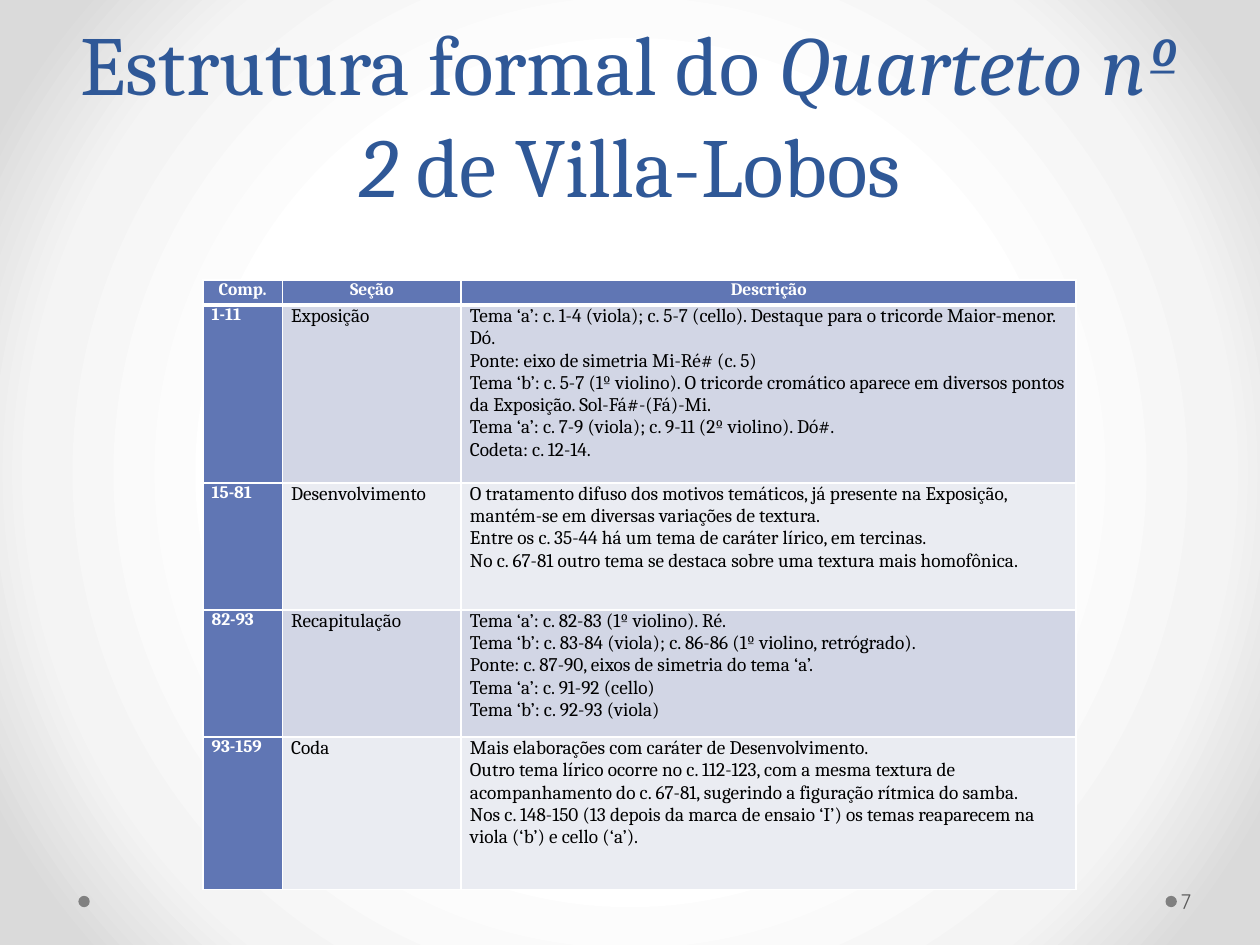
from lxml import etree
from pptx import Presentation
from pptx.dml.color import RGBColor
from pptx.enum.shapes import MSO_SHAPE
from pptx.enum.text import MSO_ANCHOR, PP_ALIGN
from pptx.oxml.ns import qn
from pptx.util import Pt

OVAL = MSO_SHAPE.OVAL
BOTTOM, MIDDLE = MSO_ANCHOR.BOTTOM, MSO_ANCHOR.MIDDLE
LEFT, CENTER = PP_ALIGN.LEFT, PP_ALIGN.CENTER

SERIF, SANS = "Cambria", "Quicksand"
WHITE, BLACK, NAVY, BLUE = "FFFFFF", "000000", "2F5897", "6076B4"
BANDS = ("D2D6E5", "EAECF2")
BACKDROP = ((50, "FFFFFF"), (76, "F4F4F4"), (92, "DADADA"))

COLUMNS = (45.4, 102.2, 351.4)
ROWS = (14.4, 101.5, 72.7, 72.7, 87.1)
HEADINGS = ("Comp.", "Seção", "Descrição")
SECTIONS = (
    ("1-11", "Exposição", (
        "Tema ‘a’: c. 1-4 (viola); c. 5-7 (cello). Destaque para o tricorde Maior-menor. Dó.",
        "Ponte: eixo de simetria Mi-Ré# (c. 5)",
        "Tema ‘b’: c. 5-7 (1º violino). O tricorde cromático aparece em diversos pontos "
        "da Exposição. Sol-Fá#-(Fá)-Mi.",
        "Tema ‘a’: c. 7-9 (viola); c. 9-11 (2º violino). Dó#.",
        "Codeta: c. 12-14.")),
    ("15-81", "Desenvolvimento", (
        "O tratamento difuso dos motivos temáticos, já presente na Exposição, "
        "mantém-se em diversas variações de textura.",
        "Entre os c. 35-44 há um tema de caráter lírico, em tercinas.",
        "No c. 67-81 outro tema se destaca sobre uma textura mais homofônica.")),
    ("82-93", "Recapitulação", (
        "Tema ‘a’: c. 82-83 (1º violino). Ré.",
        "Tema ‘b’: c. 83-84 (viola); c. 86-86 (1º violino, retrógrado).",
        "Ponte: c. 87-90, eixos de simetria do tema ‘a’.",
        "Tema ‘a’: c. 91-92 (cello)",
        "Tema ‘b’: c. 92-93 (viola)")),
    ("93-159", "Coda", (
        "Mais elaborações com caráter de Desenvolvimento.",
        "Outro tema lírico ocorre no c. 112-123, com a mesma textura de "
        "acompanhamento do c. 67-81, sugerindo a figuração rítmica do samba.",
        "Nos c. 148-150 (13 depois da marca de ensaio ‘I’) os temas reaparecem na "
        "viola (‘b’) e cello (‘a’).")),
)


def color(value):
    return RGBColor.from_string(value)


def add_span(para, text, size=11, font=SERIF, tint=BLACK, bold=False, italic=False):
    span = para.add_run()
    span.text = text
    span.font.size = Pt(size)
    span.font.name = font
    span.font.color.rgb = color(tint)
    span.font.bold = bold
    span.font.italic = italic


def paint_background(page):
    fill = page.background.fill
    fill.gradient()
    gradient = page.element.find(".//" + qn("a:gradFill"))
    for child in list(gradient):
        gradient.remove(child)
    stops = etree.SubElement(gradient, qn("a:gsLst"))
    for position, value in BACKDROP:
        stop = etree.SubElement(stops, qn("a:gs"), pos=str(position * 1000))
        etree.SubElement(stop, qn("a:srgbClr"), val=value)
    shade = etree.SubElement(gradient, qn("a:path"), path="circle")
    etree.SubElement(shade, qn("a:fillToRect"), l="50000", t="50000", r="50000", b="50000")


def add_title(page, left, top, width, height):
    frame = page.shapes.add_textbox(Pt(left), Pt(top), Pt(width), Pt(height)).text_frame
    frame.word_wrap = True
    frame.vertical_anchor = BOTTOM
    para = frame.paragraphs[0]
    para.alignment = CENTER
    para.line_spacing = Pt(58)
    for text, italic in (("Estrutura formal do ", False), ("Quarteto nº 2 ", True),
                         ("de Villa-Lobos", False)):
        add_span(para, text, size=48, tint=NAVY, italic=italic)


def set_borders(cell, bottom=1):
    properties = cell._tc.get_or_add_tcPr()
    edges = (("a:lnL", 1), ("a:lnR", 1), ("a:lnT", 1), ("a:lnB", bottom))
    for index, (tag, width) in enumerate(edges):
        line = etree.Element(qn(tag), w=str(Pt(width)))
        paint = etree.SubElement(line, qn("a:solidFill"))
        etree.SubElement(paint, qn("a:srgbClr"), val=WHITE)
        properties.insert(index, line)


def fill_cell(cell, lines, fill, align=LEFT, bottom=1, **style):
    cell.margin_left = cell.margin_right = Pt(5)
    cell.margin_top = cell.margin_bottom = 0
    cell.fill.solid()
    cell.fill.fore_color.rgb = color(fill)
    set_borders(cell, bottom)
    frame = cell.text_frame
    for index, text in enumerate(lines):
        para = frame.add_paragraph() if index else frame.paragraphs[0]
        para.alignment = align
        add_span(para, text, **style)


def add_section_table(page, left, top):
    table = page.shapes.add_table(len(ROWS), len(COLUMNS), Pt(left), Pt(top),
                                  Pt(sum(COLUMNS)), Pt(sum(ROWS))).table
    for column, width in zip(table.columns, COLUMNS):
        column.width = Pt(width)
    for row, height in zip(table.rows, ROWS):
        row.height = Pt(height)
    strong = {"size": 10, "tint": WHITE, "bold": True}
    for index, heading in enumerate(HEADINGS):
        fill_cell(table.cell(0, index), [heading], BLUE, align=CENTER, bottom=3, **strong)
    for index, (bars, section, description) in enumerate(SECTIONS):
        band = BANDS[index % 2]
        row = index + 1
        fill_cell(table.cell(row, 0), [bars], BLUE, **strong)
        fill_cell(table.cell(row, 1), [section], band)
        fill_cell(table.cell(row, 2), description, band)


def add_footer(page, top, dot_lefts, number_left):
    for left in dot_lefts:
        dot = page.shapes.add_shape(OVAL, Pt(left), Pt(top + 11.5), Pt(6.5), Pt(6.5))
        dot.shadow.inherit = False
        dot.fill.solid()
        dot.fill.fore_color.rgb = color("808080")
        dot.line.fill.background()
    frame = page.shapes.add_textbox(Pt(number_left), Pt(top), Pt(44), Pt(29)).text_frame
    frame.word_wrap = True
    frame.vertical_anchor = MIDDLE
    frame.margin_left = Pt(2)
    frame.margin_right = Pt(3.6)
    add_span(frame.paragraphs[0], "7", size=12, font=SANS, tint="595959")


def main():
    deck = Presentation()
    deck.slide_width, deck.slide_height = Pt(720), Pt(540)
    page = deck.slides.add_slide(deck.slide_layouts[6])
    paint_background(page)
    add_title(page, 36, 0, 648, 126)
    add_section_table(page, 116, 160)
    add_footer(page, 500.4, (666, 44.8), 672.5)
    deck.save("out.pptx")


if __name__ == "__main__":
    main()
